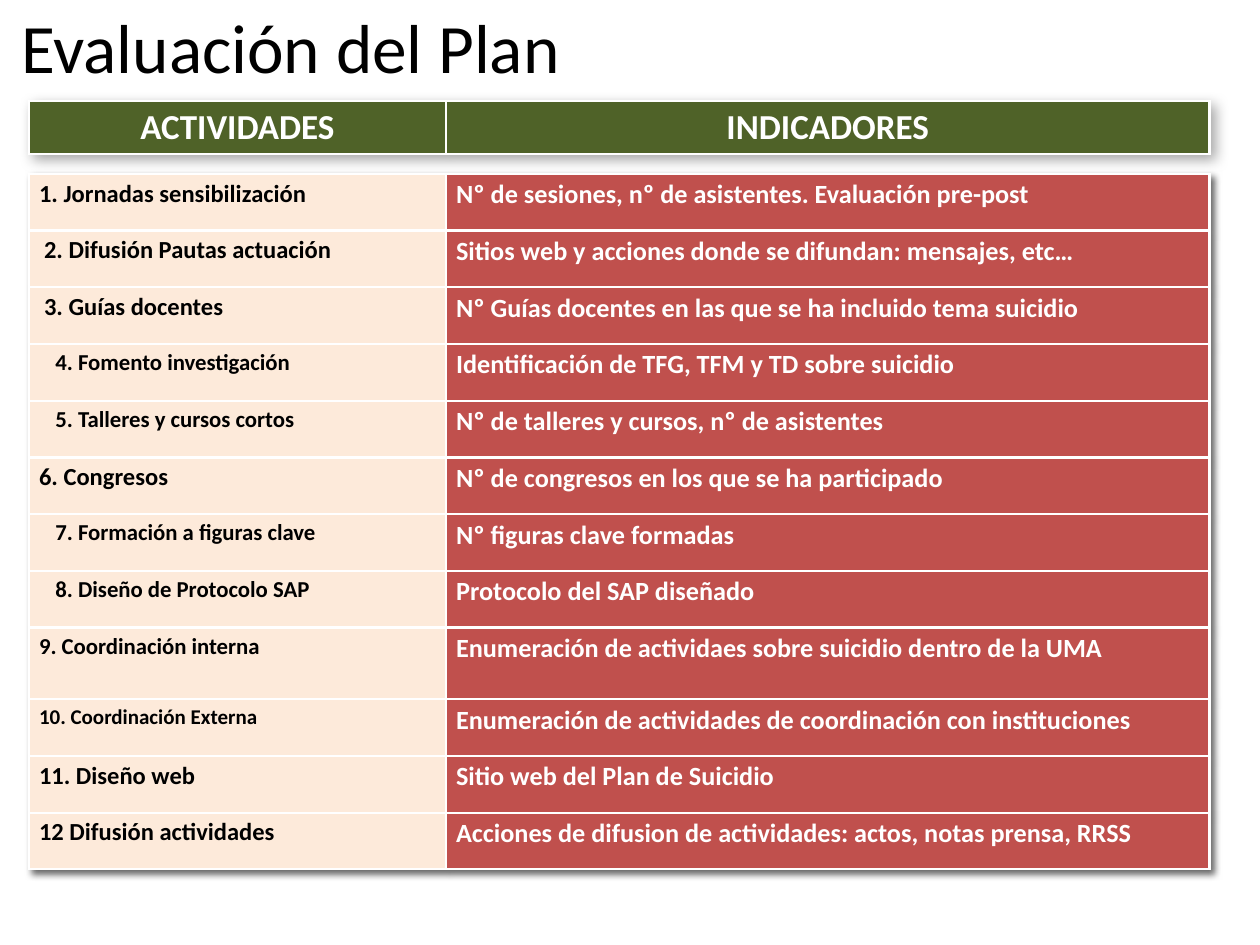
from dataclasses import dataclass

from lxml import etree
from pptx import Presentation
from pptx import util as u
from pptx.dml.color import RGBColor
from pptx.enum import text
from pptx.oxml import ns


@dataclass(frozen=True)
class Theme:
    font: str = "Calibri"
    black: str = "000000"
    white: str = "FFFFFF"
    green: str = "4F6228"
    cream: str = "FDEADA"
    red: str = "C0504D"
    title_size: float = 39.6
    header_size: float = 20
    indicator_size: float = 15


# Shadow settings: blur, distance (points), direction (degrees), opacity (%)
SOFT_SHADOW = (8, 3, 45, 35)
FIRM_SHADOW = (4, 3, 45, 60)

COLUMNS = (3.31, 6.06)
LEFT, TABLE_WIDTH = 0.23, sum(COLUMNS)

# Activity, its text size, cell inset, paragraph indent, indicator
ROWS = [
    ("1. Jornadas sensibilización", 14, 0.08, 0,
     "Nº de sesiones, nº de asistentes. Evaluación pre-post"),
    ("2. Difusión Pautas actuación", 14, 0.12, 0,
     "Sitios web y acciones donde se difundan: mensajes, etc…"),
    ("3. Guías docentes", 14, 0.12, 0,
     "Nº Guías docentes en las que se ha incluido tema suicidio"),
    ("4. Fomento investigación", 13, 0.08, 0.13,
     "Identificación de TFG, TFM y TD sobre suicidio"),
    ("5. Talleres y cursos cortos", 13, 0.08, 0.13,
     "Nº de talleres y cursos, nº de asistentes"),
    ("6. Congresos", 14, 0.08, 0,
     "Nº de congresos en los que se ha participado"),
    ("7. Formación a figuras clave", 13, 0.08, 0.13,
     "Nº figuras clave formadas"),
    ("8. Diseño de Protocolo SAP", 13, 0.08, 0.13,
     "Protocolo del SAP diseñado"),
    ("9. Coordinación interna", 13, 0.08, 0,
     "Enumeración de actividaes sobre suicidio dentro de la UMA"),
    ("10. Coordinación Externa", 12, 0.08, 0,
     "Enumeración de actividades de coordinación con instituciones"),
    ("11. Diseño web", 14, 0.08, 0,
     "Sitio web del Plan de Suicidio"),
    ("12 Difusión actividades", 14, 0.08, 0,
     "Acciones de difusion de actividades: actos, notas prensa, RRSS"),
]


def write(frame, words, *, size, color, font, bold=False, align=None, indent=0):
    """Write one formatted paragraph into a text frame."""
    para = frame.paragraphs[0]
    if align is not None:
        para.alignment = align
    if indent:
        para._p.get_or_add_pPr().set("marL", str(u.Inches(indent)))
    span = para.add_run()
    span.text = words
    span.font.name, span.font.size, span.font.bold = font, u.Pt(size), bold
    span.font.color.rgb = RGBColor.from_string(color)


def add_element(parent, tag, **attributes):
    return etree.SubElement(parent, ns.qn(tag), {k: str(v) for k, v in attributes.items()})


class PageBuilder:
    def __init__(self, page, theme):
        self.page, self.theme = page, theme

    def title(self, words, left, top, width, height):
        box = self.page.shapes.add_textbox(*map(u.Inches, (left, top, width, height)))
        frame = box.text_frame
        frame.word_wrap = True
        frame.vertical_anchor = text.MSO_ANCHOR.MIDDLE
        write(frame, words, size=self.theme.title_size, color=self.theme.black,
              font=self.theme.font)

    def table(self, top, heights, shadow):
        shape = self.page.shapes.add_table(
            len(heights), len(COLUMNS),
            *map(u.Inches, (LEFT, top, TABLE_WIDTH, sum(heights))))
        table = shape.table
        table.first_row = table.horz_banding = False
        for column, width in zip(table.columns, COLUMNS):
            column.width = u.Inches(width)
        for row, height in zip(table.rows, heights):
            row.height = u.Inches(height)
        self.table_shadow(table, *shadow)
        return table

    def table_shadow(self, table, blur, distance, angle, opacity):
        effects = etree.Element(ns.qn("a:effectLst"))
        outer = add_element(effects, "a:outerShdw", blurRad=u.Pt(blur), dist=u.Pt(distance),
                            dir=angle * 60000, algn="tl", rotWithShape=0)
        color = add_element(outer, "a:srgbClr", val=self.theme.black)
        add_element(color, "a:alpha", val=opacity * 1000)
        table._tbl.tblPr.insert(0, effects)

    def cell(self, cell, words, fill, inset=0.08, **style):
        cell.margin_left, cell.margin_right = u.Inches(inset), u.Inches(0.08)
        cell.margin_top = cell.margin_bottom = u.Inches(0.04)
        # Borders come before the fill in the cell properties
        properties = cell._tc.get_or_add_tcPr()
        for side in "LRTB":
            line = add_element(properties, f"a:ln{side}", w=u.Pt(1.5))
            solid = add_element(line, "a:solidFill")
            add_element(solid, "a:srgbClr", val=self.theme.white)
        cell.fill.solid()
        cell.fill.fore_color.rgb = RGBColor.from_string(fill)
        write(cell.text_frame, words, font=self.theme.font, bold=True, **style)


def main():
    theme = Theme()
    deck = Presentation()
    deck.slide_width, deck.slide_height = u.Inches(10), u.Inches(7.5)
    builder = PageBuilder(deck.slides.add_slide(deck.slide_layouts[6]), theme)

    # Column headings
    header = builder.table(0.8, [0.42], SOFT_SHADOW)
    for column, heading in enumerate(("ACTIVIDADES", "INDICADORES")):
        builder.cell(header.cell(0, column), heading, theme.green, size=theme.header_size,
                     color=theme.white, align=text.PP_ALIGN.CENTER)

    # Activities and their indicators; the ninth row is taller
    heights = [0.57 if number == 9 else 0.45 for number in range(1, len(ROWS) + 1)]
    body = builder.table(1.38, heights, FIRM_SHADOW)
    for row, (activity, size, inset, indent, indicator) in enumerate(ROWS):
        builder.cell(body.cell(row, 0), activity, theme.cream, inset, size=size,
                     color=theme.black, indent=indent)
        builder.cell(body.cell(row, 1), indicator, theme.red,
                     size=theme.indicator_size, color=theme.white)

    # Title
    builder.title("Evaluación del Plan", 0.07, 0.09, 9, 0.55)

    deck.save("out.pptx")


if __name__ == "__main__":
    main()
